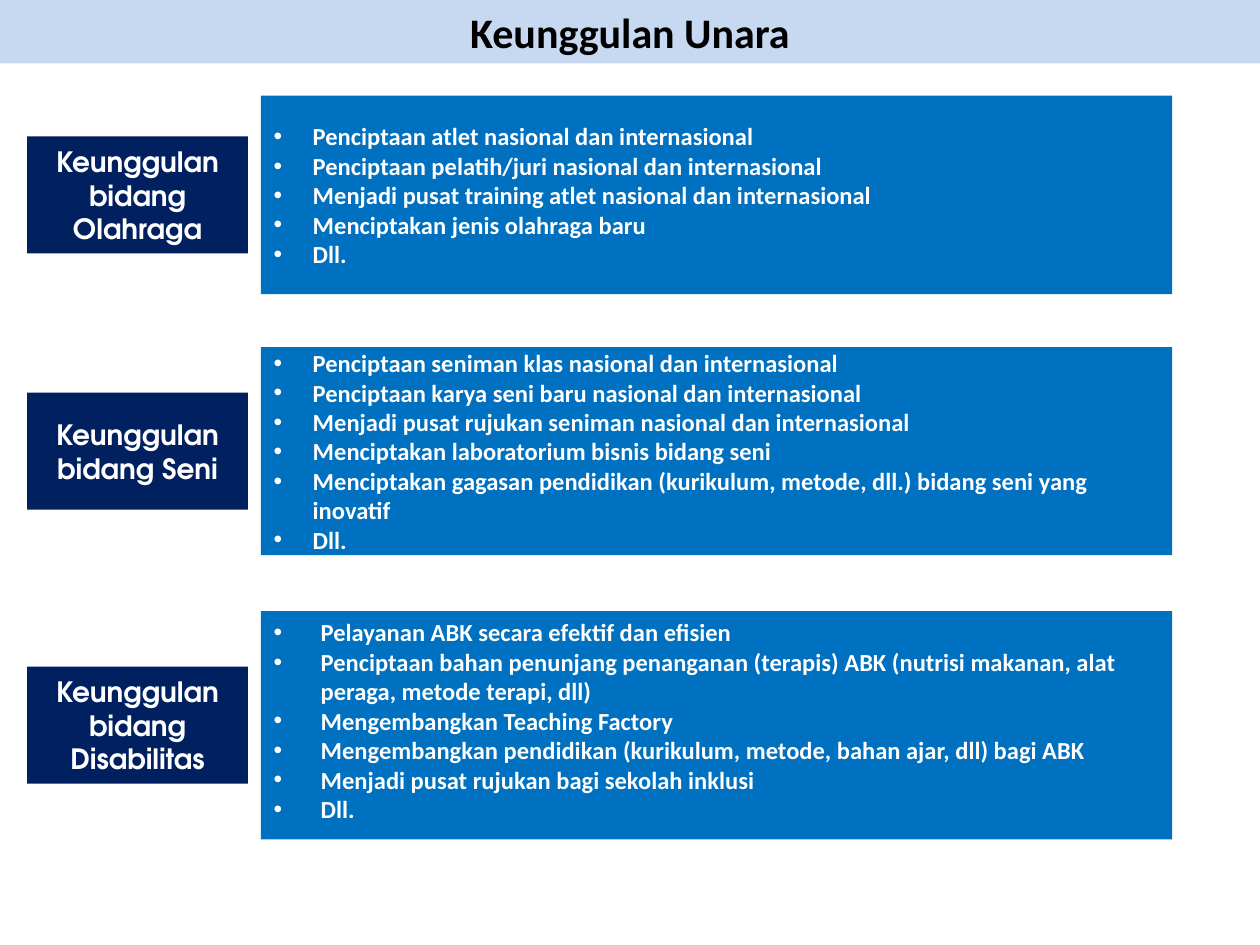
import pptx
import pptx.util
import pptx.dml.color
import pptx.enum.shapes
import pptx.enum.text
import pptx.oxml
import pptx.oxml.ns

Cm = pptx.util.Cm
Pt = pptx.util.Pt
RGBColor = pptx.dml.color.RGBColor
PP_ALIGN = pptx.enum.text.PP_ALIGN
MSO_ANCHOR = pptx.enum.text.MSO_ANCHOR

PALE = RGBColor(0xC6, 0xD9, 0xF1)
BLUE = RGBColor(0x00, 0x70, 0xC0)
NAVY = RGBColor(0x00, 0x20, 0x60)
WHITE = RGBColor(0xFF, 0xFF, 0xFF)
BLACK = RGBColor(0x00, 0x00, 0x00)

TITLE = "Keunggulan Unara"
FIELDS = [
    {
        "label": "Keunggulan bidang Olahraga",
        "top": 1.93, "height": 4.0, "indent": 0.79, "anchor": MSO_ANCHOR.MIDDLE,
        "points": [
            "Penciptaan atlet nasional dan internasional",
            "Penciptaan pelatih/juri nasional dan internasional",
            "Menjadi pusat training atlet nasional dan internasional",
            "Menciptakan jenis olahraga baru",
            "Dll.",
        ],
    },
    {
        "label": "Keunggulan bidang Seni",
        "top": 7.0, "height": 4.19, "indent": 0.79, "anchor": MSO_ANCHOR.MIDDLE,
        "points": [
            "Penciptaan seniman klas nasional dan internasional",
            "Penciptaan karya seni baru nasional dan internasional",
            "Menjadi pusat rujukan seniman nasional dan internasional",
            "Menciptakan laboratorium bisnis bidang seni",
            "Menciptakan gagasan pendidikan (kurikulum, metode, dll.) "
            "bidang seni yang inovatif",
            "Dll.",
        ],
    },
    {
        "label": "Keunggulan bidang Disabilitas",
        "top": 12.32, "height": 4.6, "indent": 0.95, "anchor": MSO_ANCHOR.TOP,
        "points": [
            "Pelayanan ABK secara efektif dan efisien",
            "Penciptaan bahan penunjang penanganan (terapis) ABK "
            "(nutrisi makanan, alat peraga, metode terapi, dll)",
            "Mengembangkan Teaching Factory",
            "Mengembangkan pendidikan (kurikulum, metode, bahan ajar, dll) bagi ABK",
            "Menjadi pusat rujukan bagi sekolah inklusi",
            "Dll.",
        ],
    },
]
LABEL_LEFT, LABEL_WIDTH, LABEL_HEIGHT = 0.55, 4.45, 2.36
PANEL_LEFT, PANEL_WIDTH = 5.26, 18.37


def style_box(sp, left, top, width, height, fill, anchor):
    sp.left, sp.top, sp.width, sp.height = Cm(left), Cm(top), Cm(width), Cm(height)
    sp.fill.solid()
    sp.fill.fore_color.rgb = fill
    sp.line.fill.background()
    tf = sp.text_frame
    tf.word_wrap = True
    tf.auto_size = pptx.enum.text.MSO_AUTO_SIZE.NONE
    tf.vertical_anchor = anchor
    return tf


def style_paragraph(p, font, size, color, align):
    p.font.name = font
    p.font.size = Pt(size)
    p.font.bold = True
    p.font.color.rgb = color
    p.alignment = align
    p.space_before = Pt(0)


def add_bullet(p, indent):
    pPr = p._p.get_or_add_pPr()
    pPr.set("marL", str(Cm(indent)))
    pPr.set("indent", str(-Cm(indent)))
    for tag, attrs in (("buFont", 'typeface="Arial"'), ("buChar", 'char="•"')):
        bullet = pptx.oxml.parse_xml(
            f'<a:{tag} {pptx.oxml.ns.nsdecls("a")} {attrs}/>')
        pPr.insert_element_before(bullet, "a:tabLst", "a:defRPr", "a:extLst")


prs = pptx.Presentation()
prs.slide_width, prs.slide_height = Cm(25.4), Cm(19.05)
slide = prs.slides.add_slide(prs.slide_layouts.get_by_name("Comparison"))

tf = style_box(slide.shapes.title, 0, 0, 25.4, 1.28, PALE, MSO_ANCHOR.TOP)
tf.text = TITLE
style_paragraph(tf.paragraphs[0], "Calibri", 24, BLACK, PP_ALIGN.CENTER)

bodies = [sp for sp in slide.placeholders
          if sp.placeholder_format.idx in range(1, 5)]
for field, body in zip(FIELDS, bodies):
    top, height = field["top"], field["height"]
    tf = style_box(body, PANEL_LEFT, top, PANEL_WIDTH, height, BLUE, field["anchor"])
    tf.text = "\n".join(field["points"])
    for p in tf.paragraphs:
        style_paragraph(p, "Calibri", 14, WHITE, PP_ALIGN.LEFT)
        add_bullet(p, field["indent"])

    sp = slide.shapes.add_shape(pptx.enum.shapes.MSO_SHAPE.RECTANGLE, 0, 0, 0, 0)
    sp.shadow.inherit = False
    label_top = top + (height - LABEL_HEIGHT) / 2
    tf = style_box(sp, LABEL_LEFT, label_top, LABEL_WIDTH, LABEL_HEIGHT,
                   NAVY, MSO_ANCHOR.MIDDLE)
    tf.text = field["label"]
    style_paragraph(tf.paragraphs[0], "TeX Gyre Adventor", 16, WHITE, PP_ALIGN.CENTER)

for sp in bodies[len(FIELDS):]:
    sp.element.getparent().remove(sp.element)

prs.save("out.pptx")
